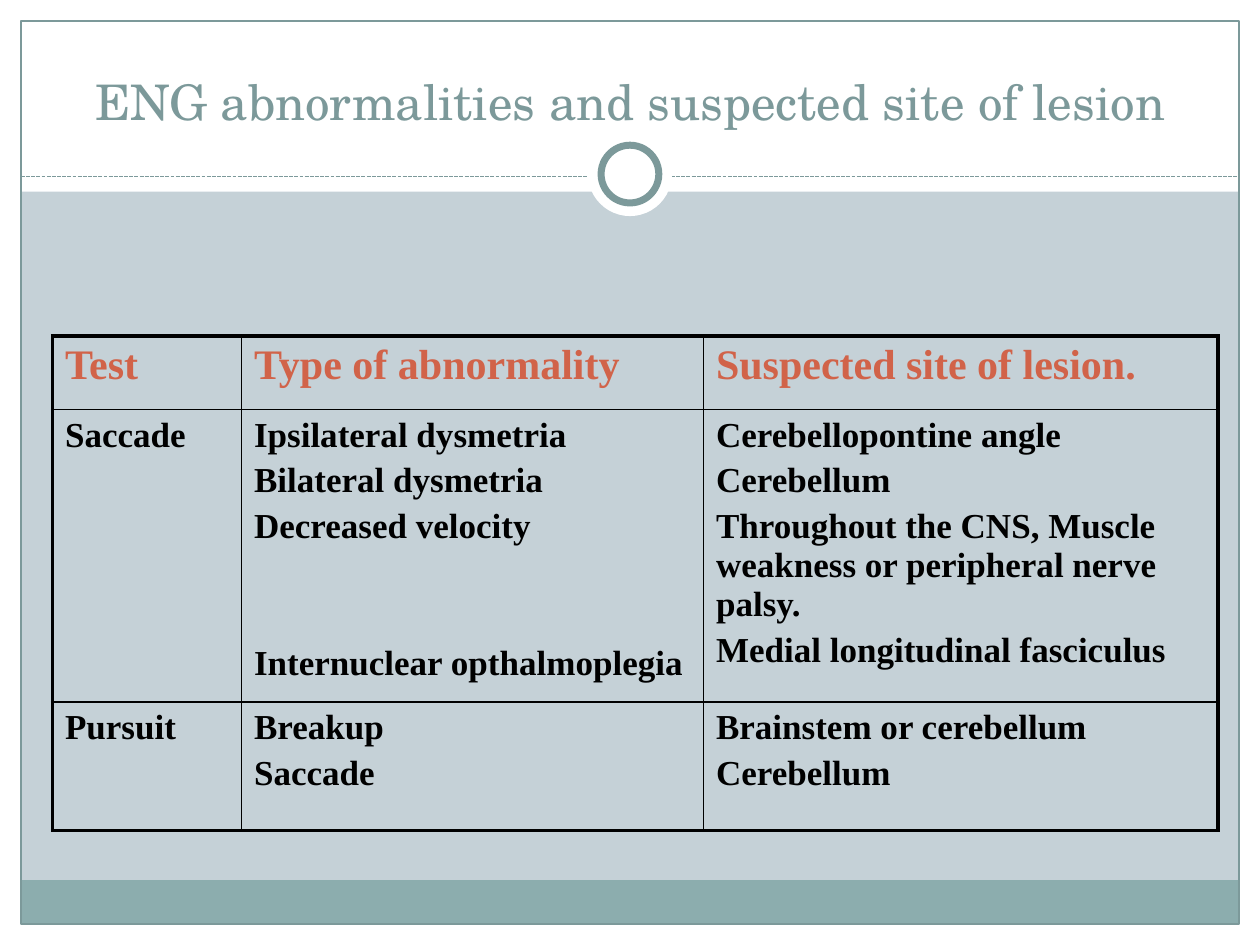
from collections import namedtuple
from lxml.etree import SubElement as Sub
from pptx import Presentation
from pptx.dml.color import RGBColor as RGB
from pptx.enum.dml import MSO_LINE_DASH_STYLE as Dash
from pptx.enum.shapes import MSO_CONNECTOR as Conn, MSO_SHAPE as Kind
from pptx.enum.text import MSO_ANCHOR as Anchor, PP_ALIGN as Align
from pptx.oxml.ns import qn
from pptx.util import Pt

Theme = namedtuple("Theme", "back white band teal red black title head body serif roman")
theme = Theme("C5D1D7", "FFFFFF", "8CADAE", "7C999A", "D16349", "000000",
              28, 24, 20, "TeX Gyre Schola", "Times New Roman")


def style(para, size, color, font, bold=False):
    for run in para.runs:
        run.font.size = Pt(size)
        run.font.name = font
        run.font.bold = bold
        run.font.color.rgb = RGB.from_string(color)


def edge(cell, side, width):
    line = Sub(cell._tc.get_or_add_tcPr(), qn("a:ln" + side), w=str(Pt(width)))
    fill = Sub(line, qn("a:solidFill"))
    Sub(fill, qn("a:srgbClr"), val=theme.black)


deck = Presentation()
deck.slide_width, deck.slide_height = Pt(720), Pt(540)
slide = deck.slides.add_slide(deck.slide_layouts[6])
slide.background.fill.solid()
slide.background.fill.fore_color.rgb = RGB.from_string(theme.back)
shapes = slide.shapes

rule = shapes.add_connector(Conn.STRAIGHT, Pt(12), Pt(100.8), Pt(708), Pt(100.8))
rule.line.color.rgb = RGB.from_string(theme.teal)
rule.line.width = Pt(0.75)
rule.line.dash_style = Dash.SQUARE_DOT
Sub(rule._element.spPr, qn("a:effectLst"))

parts = [
    (Kind.RECTANGLE, 0, 528, 720, 12, theme.white, 0),
    (Kind.RECTANGLE, 0, 0, 720, 109.5, theme.white, 0),
    (Kind.RECTANGLE, 0, 0, 12, 540, theme.white, 0),
    (Kind.RECTANGLE, 708, 0, 12, 540, theme.white, 0),
    (Kind.RECTANGLE, 12, 503, 696, 25, theme.band, 0),
    (Kind.RECTANGLE, 12, 12, 696, 516, None, 0.75),
    (Kind.OVAL, 336, 75.5, 48, 48, theme.white, 0),
    (Kind.OVAL, 343.5, 83, 33, 33, theme.white, 4),
]
for kind, left, top, wide, high, color, stroke in parts:
    if kind == Kind.OVAL and not stroke:
        shapes._spTree.append(rule._element)
    part = shapes.add_shape(kind, Pt(left), Pt(top), Pt(wide), Pt(high))
    part.shadow.inherit = False
    if color:
        part.fill.solid()
        part.fill.fore_color.rgb = RGB.from_string(color)
    else:
        part.fill.background()
    if stroke:
        part.line.color.rgb = RGB.from_string(theme.teal)
        part.line.width = Pt(stroke)
    else:
        part.line.fill.background()

title = shapes.add_textbox(Pt(24), Pt(18), Pt(672), Pt(60)).text_frame
title.word_wrap = True
title.vertical_anchor = Anchor.BOTTOM
title.text = "ENG abnormalities and suspected site of lesion"
title.paragraphs[0].alignment = Align.CENTER
style(title.paragraphs[0], theme.title, theme.teal, theme.serif)

rows = [
    ["Test", "Type of abnormality", "Suspected site of lesion."],
    ["Saccade",
     "Ipsilateral dysmetria\nBilateral dysmetria\nDecreased velocity\nInternuclear opthalmoplegia",
     "Cerebellopontine angle\nCerebellum\n"
     "Throughout the CNS, Muscle weakness or peripheral nerve palsy.\n"
     "Medial longitudinal fasciculus"],
    ["Pursuit", "Breakup\nSaccade", "Brainstem or cerebellum\nCerebellum"],
]
widths, heights = [108, 264, 294], [42, 160, 73.5]
table = shapes.add_table(3, 3, Pt(30), Pt(192), Pt(sum(widths)), Pt(sum(heights))).table
table.horz_banding = table.first_row = False
for col, wide in zip(table.columns, widths):
    col.width = Pt(wide)
for row, high in zip(table.rows, heights):
    row.height = Pt(high)

for r, row in enumerate(rows):
    size, color = (theme.body, theme.black) if r else (theme.head, theme.red)
    for c, text in enumerate(row):
        cell = table.cell(r, c)
        outer = {"L": c == 0, "R": c == 2, "T": r == 0, "B": r == 2}
        for side, thick in outer.items():
            edge(cell, side, 2.25 if thick else 1)
        cell.fill.background()
        cell.text_frame.text = text
        for para in cell.text_frame.paragraphs:
            para.space_before = Pt(size / 5)
            style(para, size, color, theme.roman, True)

table.cell(1, 1).text_frame.paragraphs[3].space_before = Pt(56)

deck.save("out.pptx")
